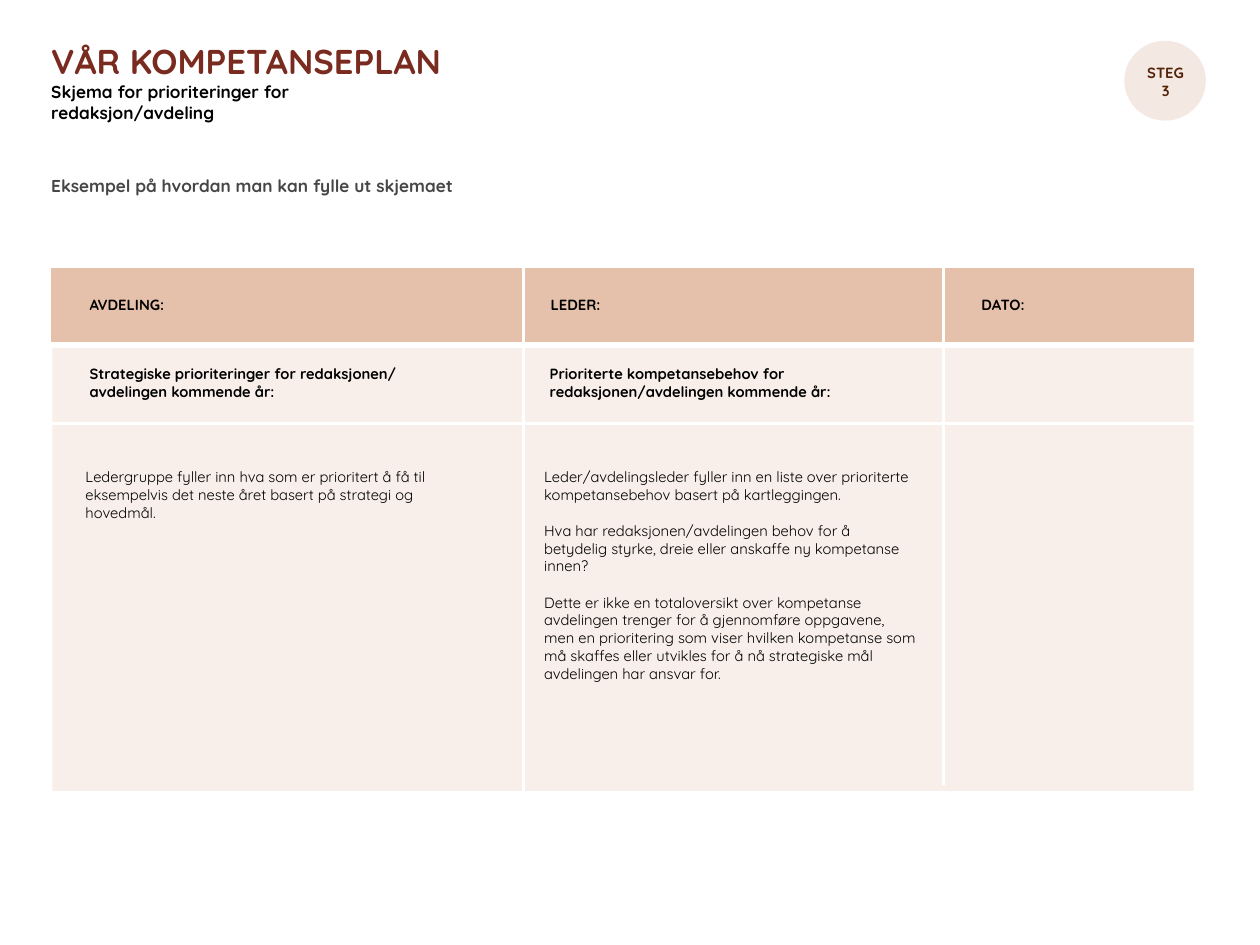
import pptx
import pptx.dml.color
import pptx.enum.shapes
import pptx.enum.text
import pptx.oxml
import pptx.oxml.ns
import pptx.util
from lxml import etree

Cm = pptx.util.Cm
Pt = pptx.util.Pt
RGB = pptx.dml.color.RGBColor
SHAPE = pptx.enum.shapes.MSO_SHAPE
ANCHOR = pptx.enum.text.MSO_ANCHOR
ALIGN = pptx.enum.text.PP_ALIGN
qn = pptx.oxml.ns.qn

FONT = "Quicksand"
BLACK = RGB(0x00, 0x00, 0x00)
WHITE = RGB(0xFF, 0xFF, 0xFF)
GREY = RGB(0x46, 0x46, 0x46)
RUST = RGB(0x7A, 0x2B, 0x1F)
BROWN = RGB(0x55, 0x22, 0x0A)
BADGE = RGB(0xF3, 0xE9, 0xE2)
HEADER = RGB(0xE5, 0xC1, 0xAC)
PANEL = RGB(0xF5, 0xE9, 0xE1)


def add_text(tf, text, size=12, color=BLACK, bold=False, align=ALIGN.LEFT, before=0):
    """Add a paragraph, using the empty first one if there is one."""
    first = not tf.text
    p = tf.paragraphs[0] if first else tf.add_paragraph()
    p.text = text
    p.alignment = align
    if not first:
        p.space_before = Pt(before)
    for r in p.runs:
        r.font.name = FONT
        r.font.size = Pt(size)
        r.font.bold = bold
        r.font.color.rgb = color
    for br in p._p.findall(qn("a:br")):
        etree.SubElement(br, qn("a:rPr"), sz=str(size * 100))


def add_box(s, x, y, w, h, anchor=ANCHOR.MIDDLE):
    tf = s.shapes.add_textbox(Cm(x), Cm(y), Cm(w), Cm(h)).text_frame
    tf.word_wrap = True
    tf.vertical_anchor = anchor
    tf.margin_left = tf.margin_right = tf.margin_top = tf.margin_bottom = Cm(0.16)
    return tf


def add_filled(s, kind, x, y, w, h, color, alpha=None):
    sp = s.shapes.add_shape(kind, Cm(x), Cm(y), Cm(w), Cm(h))
    sp.shadow.inherit = False
    sp.fill.solid()
    sp.fill.fore_color.rgb = color
    sp.line.fill.background()
    if alpha:
        clr = sp._element.spPr.find(qn("a:solidFill"))[0]
        etree.SubElement(clr, qn("a:alpha"), val=str(alpha * 1000))
    return sp


def add_rule(s, x1, y1, x2, y2):
    line = s.shapes.add_connector(
        pptx.enum.shapes.MSO_CONNECTOR.STRAIGHT, Cm(x1), Cm(y1), Cm(x2), Cm(y2))
    line.line.color.rgb = WHITE
    line.line.width = Pt(2)
    etree.SubElement(line._element.spPr, qn("a:effectLst"))


def add_heading(s, x, y, w):
    tf = add_box(s, x, y, w, 2.08)
    add_text(tf, "VÅR KOMPETANSEPLAN", size=28, color=RUST, bold=True)
    add_text(tf, "Skjema for prioriteringer for redaksjon/avdeling", size=14, bold=True)
    tf = add_box(s, x, y + 3.58, 25.68, 0.89)
    add_text(tf, "Eksempel på hvordan man kan fylle ut skjemaet",
             size=14, color=GREY, bold=True)


def add_step_badge(s, x, y, w, h):
    add_filled(s, SHAPE.OVAL, x, y, w, h, BADGE)
    tf = add_box(s, x + 0.36, y + 0.76, 1.65, 0.81)
    add_text(tf, "STEG 3", color=BROWN, bold=True, align=ALIGN.CENTER)


def add_header_band(s, x, y, w, h, splits):
    band = add_filled(s, SHAPE.RECTANGLE, x, y, w, h, HEADER)
    band.line.color.rgb = HEADER
    band.line.width = Pt(1)
    for split in splits:
        add_rule(s, split, y - 0.18, split, y + h + 0.18)
    labels = [
        ("AVDELING:", x + 0.94, 6.86, ALIGN.LEFT),
        ("LEDER:", splits[0] + 0.59, 1.8, ALIGN.CENTER),
        ("DATO:", splits[1] + 0.84, 1.73, ALIGN.CENTER),
    ]
    for text, left, width, align in labels:
        tf = add_box(s, left, y + 0.48, width, 1.09)
        add_text(tf, text, bold=True, align=align)


def add_priorities(s, x, y, w, h, splits):
    add_filled(s, SHAPE.RECTANGLE, x, y, w, h, PANEL, alpha=69)
    add_rule(s, splits[0], y - 0.12, splits[0], y + h + 0.1)
    add_rule(s, splits[1], y - 0.4, splits[1], y + h - 0.18)
    add_rule(s, x - 0.23, y + 2.16, x + w + 0.22, y + 2.16)
    columns = [
        (x + 0.91, 11.66, "Strategiske prioriteringer for redaksjonen/ \vavdelingen kommende år:",
         x + 0.79, 2.21,
         ["Ledergruppe fyller inn hva som er prioritert å få til eksempelvis det neste året "
          "basert på strategi og hovedmål."]),
        (splits[0] + 0.59, 11, "Prioriterte kompetansebehov for redaksjonen/avdelingen kommende år:",
         splits[0] + 0.43, 8.33,
         ["Leder/avdelingsleder fyller inn en liste over prioriterte kompetansebehov "
          "basert på kartleggingen.",
          "Hva har redaksjonen/avdelingen behov for å betydelig styrke, dreie eller "
          "anskaffe ny kompetanse innen?",
          "Dette er ikke en totaloversikt over kompetanse avdelingen trenger for å "
          "gjennomføre oppgavene, men en prioritering som viser hvilken kompetanse som "
          "må skaffes eller utvikles for å nå strategiske mål avdelingen har ansvar for."]),
    ]
    for head_x, head_w, head, body_x, body_h, paragraphs in columns:
        add_text(add_box(s, head_x, y + 0.1, head_w, 1.78), head, bold=True)
        tf = add_box(s, body_x, y + 3.28, 11, body_h, anchor=ANCHOR.TOP)
        for text in paragraphs:
            add_text(tf, text, before=15)


def main():
    prs = pptx.Presentation()
    prs.slide_width, prs.slide_height = Cm(36.12), Cm(27.1)
    s = prs.slides.add_slide(prs.slide_layouts[6])
    splits = (15.01, 27.05)
    add_heading(s, 1.31, 1.3, 11.6)
    add_step_badge(s, 32.23, 1.17, 2.34, 2.29)
    add_header_band(s, 1.47, 7.7, 32.74, 2.08, splits)
    add_priorities(s, 1.5, 9.98, 32.72, 12.7, splits)
    prs.save("out.pptx")


if __name__ == "__main__":
    main()
